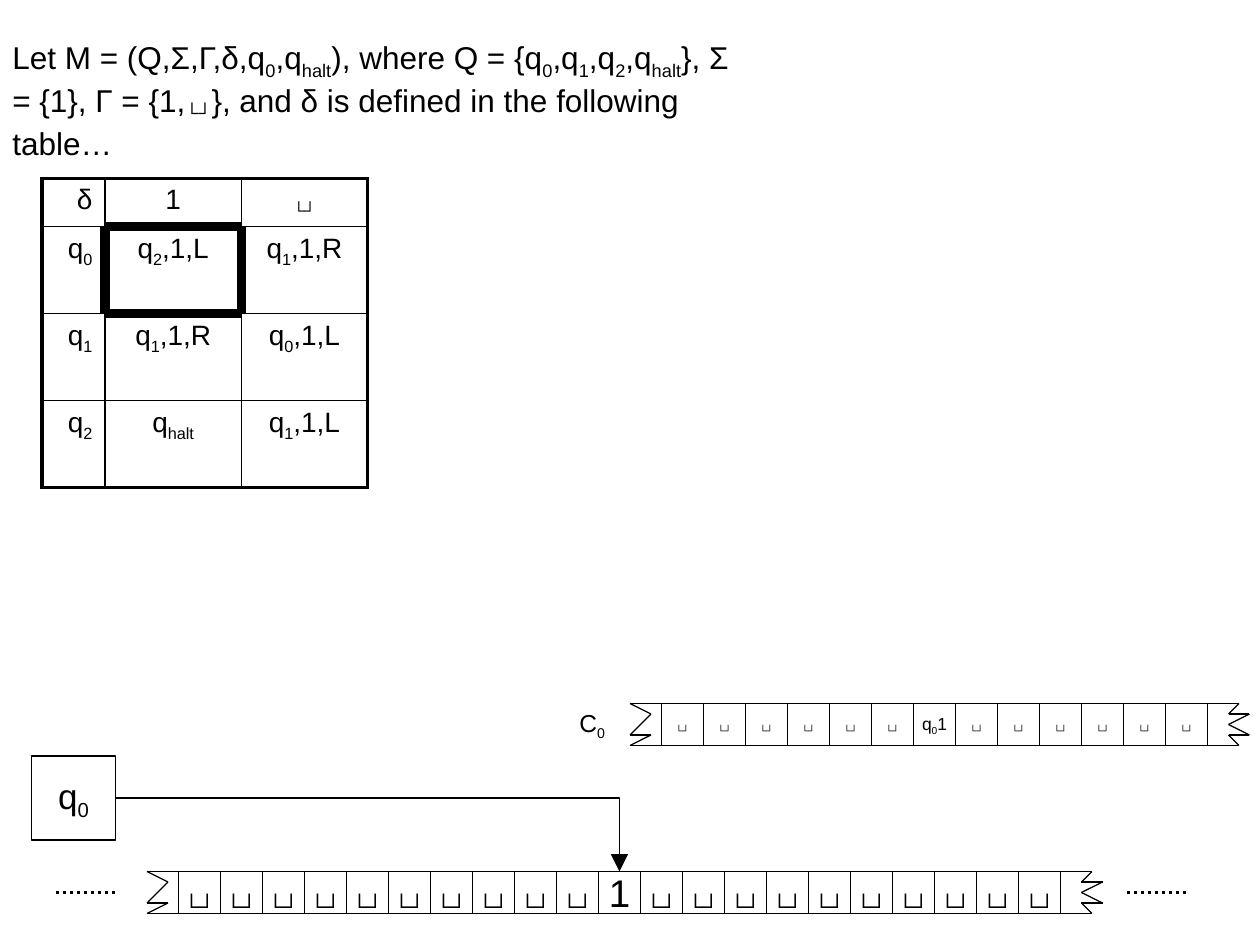
from dataclasses import dataclass
from itertools import pairwise

from lxml.etree import SubElement
from pptx import Presentation
from pptx.dml.color import RGBColor
from pptx.enum.dml import MSO_LINE
from pptx.enum.shapes import MSO_CONNECTOR as Connector, MSO_SHAPE
from pptx.enum.text import MSO_ANCHOR as Anchor, PP_ALIGN as Align
from pptx.oxml.ns import qn
from pptx.util import Inches, Pt

COLORS = {"ink": "000000"}
INK = RGBColor.from_string(COLORS["ink"])
FONT = "Arial"
UNIT = Inches(1) // 12  # the slide is a grid of 120 columns by 90 rows
CELL = 4
BLANK = "_└┘_"
THIN, DOTTED = 0.75, 2

# Torn tape ends, in grid units from the top of the tape's edge
LEFT_TEAR = [(0, 4), (-3, 4), (-1, 3), (-3, 3), (-1, 1), (-3, 0), (0, 0), (0, 4)]
RIGHT_TEAR = [(0, 4), (3, 4), (2, 3), (4, 3), (2, 2), (4, 1), (2, 1), (3, 0),
              (0, 0), (0, 4)]

TRANSITIONS = [
    ["δ", "1", BLANK],
    ["q_0_", "q_2_,1,L", "q_1_,1,R"],
    ["q_1_", "q_1_,1,R", "q_0_,1,L"],
    ["q_2_", "q_halt_", "q_1_,1,L"],
]
ACTIVE = (1, 1)
COLUMN_UNITS = [6, 13, 12]
ROW_INCHES = [0.37, 0.69, 0.69, 0.69]
INNER, OUTER, HIGHLIGHT = 1, 2.25, 6


@dataclass
class Tape:
    column: int
    row: int
    length: int
    head: int
    head_text: str
    size: int


MACHINE_TAPE = Tape(17, 83, 21, 10, "1", 22)
CONFIGURATION = Tape(63, 67, 13, 6, "q_0_1", 10)


def grid(*units: float) -> list[int]:
    return [round(unit * UNIT) for unit in units]


def write(frame, text: str, size: int, align=Align.LEFT) -> None:
    """Fill a text frame; parts between underscores become subscripts."""
    paragraph = frame.paragraphs[0]
    paragraph.alignment = align
    font = paragraph.font
    font.name, font.size, font.color.rgb = FONT, Pt(size), INK
    for index, part in enumerate(text.split("_")):
        if part:
            run = paragraph.add_run()
            run.text = part
            if index % 2:
                run._r.get_or_add_rPr().set("baseline", "-25000")


def add_box(shapes, column: int, row: int, side: int, text: str, size: int):
    box = shapes.add_shape(MSO_SHAPE.RECTANGLE, *grid(column, row, side, side))
    box.shadow.inherit = False
    box.fill.background()
    box.line.color.rgb, box.line.width = INK, Pt(THIN)
    box.text_frame.word_wrap = False
    box.text_frame.vertical_anchor = Anchor.MIDDLE
    write(box.text_frame, text, size, Align.CENTER)
    return box


def add_line(shapes, start: tuple, end: tuple, width=THIN, kind=Connector.STRAIGHT):
    line = shapes.add_connector(kind, *grid(*start, *end))
    line.line.color.rgb, line.line.width = INK, Pt(width)
    SubElement(line._element.spPr, qn("a:effectLst"))
    return line


def add_tear(shapes, column: int, row: int, outline: list) -> None:
    group = shapes.add_group_shape()
    points = [(column + x, row + y) for x, y in outline]
    for start, end in pairwise(points):
        add_line(group.shapes, start, end)


def add_tape(shapes, tape: Tape):
    """Draw the tape and return the cell under the head."""
    cells = [
        add_box(shapes, tape.column + index * CELL, tape.row, CELL,
                tape.head_text if index == tape.head else BLANK, tape.size)
        for index in range(tape.length)
    ]
    add_tear(shapes, tape.column, tape.row, LEFT_TEAR)
    add_tear(shapes, tape.column + tape.length * CELL, tape.row, RIGHT_TEAR)
    return cells[tape.head]


def border_width(position: tuple, neighbour: tuple) -> float:
    if ACTIVE in (position, neighbour):
        return HIGHLIGHT
    row, column = neighbour
    inside = 0 <= row < len(ROW_INCHES) and 0 <= column < len(COLUMN_UNITS)
    return INNER if inside else OUTER


def set_borders(cell, row: int, column: int) -> None:
    neighbours = {"lnL": (row, column - 1), "lnR": (row, column + 1),
                  "lnT": (row - 1, column), "lnB": (row + 1, column)}
    properties = cell._tc.get_or_add_tcPr()
    for tag, neighbour in neighbours.items():
        width = Pt(border_width((row, column), neighbour))
        border = SubElement(properties, qn(f"a:{tag}"), w=str(width))
        fill = SubElement(border, qn("a:solidFill"))
        SubElement(fill, qn("a:srgbClr"), val=COLORS["ink"])


def add_transition_table(shapes) -> None:
    frame = shapes.add_table(len(ROW_INCHES), len(COLUMN_UNITS),
                             *grid(4, 17, sum(COLUMN_UNITS)), Inches(sum(ROW_INCHES)))
    table = frame.table
    table.first_row = table.horz_banding = False
    for column, units in zip(table.columns, COLUMN_UNITS):
        column.width = units * UNIT
    for row, height in zip(table.rows, ROW_INCHES):
        row.height = Inches(height)
    for row, texts in enumerate(TRANSITIONS):
        for column, text in enumerate(texts):
            cell = table.cell(row, column)
            write(cell.text_frame, text, 16, Align.CENTER if column else Align.RIGHT)
            set_borders(cell, row, column)
            cell.fill.background()


def add_head_arrow(shapes, state, cell) -> None:
    arrow = add_line(shapes, (11, 76), (59, 83), kind=Connector.ELBOW)
    arrow.begin_connect(state, 3)
    arrow.end_connect(cell, 0)
    arrow._element.spPr.find(qn("a:prstGeom")).set("prst", "bentConnector2")
    SubElement(arrow.line._get_or_add_ln(), qn("a:tailEnd"),
               type="triangle", w="lg", len="lg")


def add_label(shapes, column: int, row: int, text: str, size: int) -> None:
    frame = shapes.add_textbox(*grid(column, row, CELL, CELL)).text_frame
    frame.word_wrap = False
    frame.margin_right = 0  # leaves room for the subscript on the same line
    frame.vertical_anchor = Anchor.MIDDLE
    write(frame, text, size)


def main() -> None:
    presentation = Presentation()
    presentation.slide_width, presentation.slide_height = grid(120, 90)
    shapes = presentation.slides.add_slide(presentation.slide_layouts[6]).shapes

    state = add_box(shapes, 3, 72, 8, "q_0_", 20)
    head_cell = add_tape(shapes, MACHINE_TAPE)
    add_head_arrow(shapes, state, head_cell)
    for start in (11, 113):
        dots = add_line(shapes, (start, 85), (start - 6, 85), DOTTED)
        dots.line.dash_style = MSO_LINE.ROUND_DOT

    add_transition_table(shapes)

    definition = shapes.add_textbox(*grid(0, 3, 72, 12)).text_frame
    definition.word_wrap = True
    write(definition, "Let M = (Q,Σ,Γ,δ,q_0_,q_halt_), where Q = {q_0_,q_1_,q_2_,q_halt_}, "
          f"Σ = {{1}}, Γ = {{1,{BLANK}}}, and δ is defined in the following table…", 18)

    configuration = shapes.add_group_shape().shapes
    add_tape(configuration, CONFIGURATION)
    add_label(configuration, 54, 67, "C_0_", 14)

    presentation.save("out.pptx")


if __name__ == "__main__":
    main()
